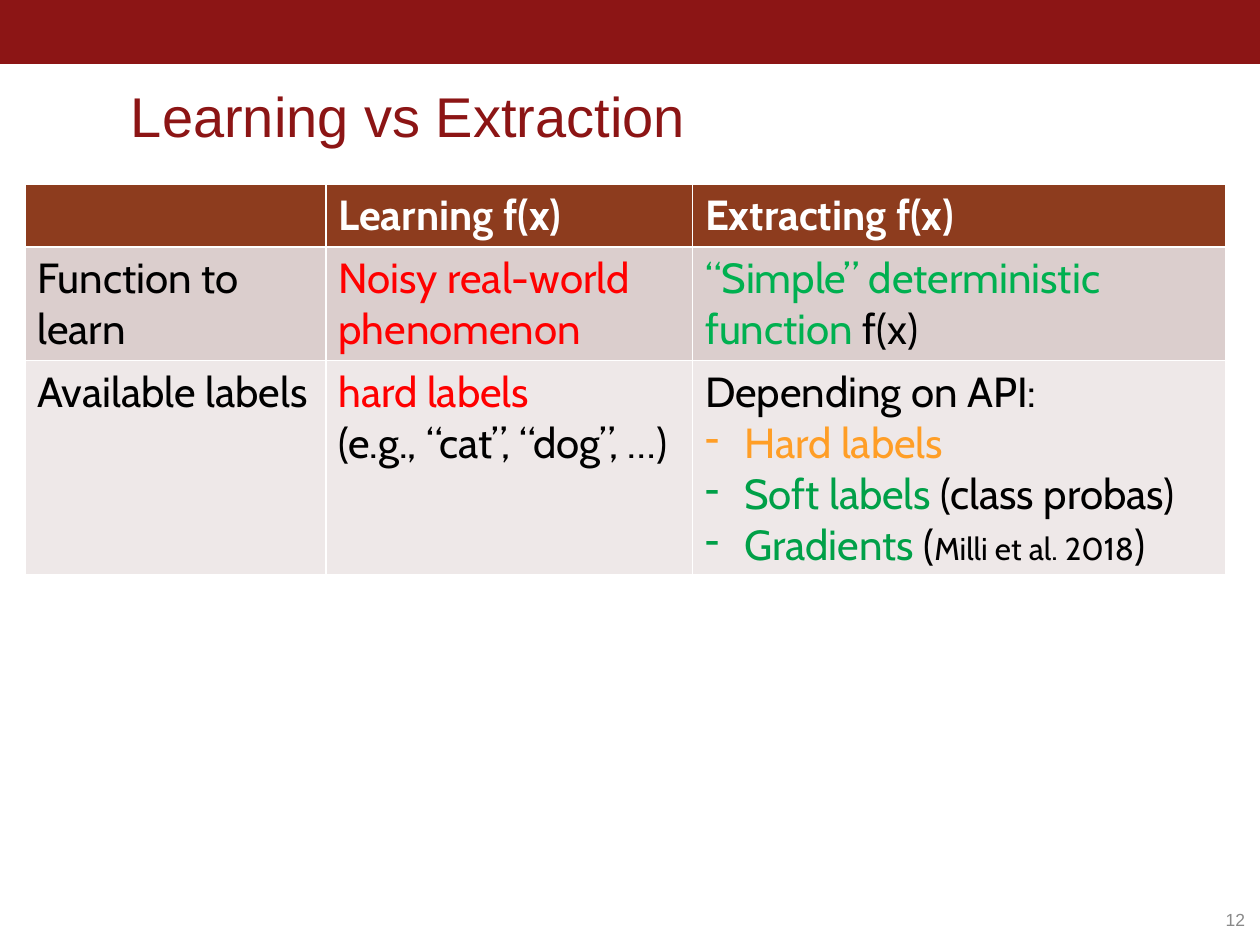
from dataclasses import dataclass

from lxml import etree
from pptx import Presentation
from pptx.dml.color import RGBColor
from pptx.enum.shapes import MSO_SHAPE
from pptx.enum.text import MSO_ANCHOR, PP_ALIGN
from pptx.oxml.ns import qn
from pptx.util import Cm, Pt

RECTANGLE = MSO_SHAPE.RECTANGLE
BOTTOM, MIDDLE = MSO_ANCHOR.BOTTOM, MSO_ANCHOR.MIDDLE
LEFT, RIGHT = PP_ALIGN.LEFT, PP_ALIGN.RIGHT


@dataclass(frozen=True)
class Theme:
    heading_font: str = "Arial"
    table_font: str = "Cabin"
    cardinal: str = "8C1515"
    header_fill: str = "8D3C1E"
    row_fills: tuple = ("DBCECD", "EEE8E8")
    white: str = "FFFFFF"
    black: str = "000000"
    red: str = "FF0000"
    green: str = "00B050"
    deep_green: str = "00A048"
    orange: str = "FF9E26"
    gray: str = "898989"
    title_size: int = 32
    table_size: int = 24
    citation_size: int = 18
    number_size: int = 10


THEME = Theme()

# A cell is a list of paragraphs; a paragraph is a list of (text, color[, size]).
# A paragraph that starts with BULLET is a dash item.
BULLET = "-"
HEADER = ["", "Learning f(x)", "Extracting f(x)"]
COMPARISON = [
    [
        [[("Function to learn", THEME.black)]],
        [[("Noisy real-world phenomenon", THEME.red)]],
        [[("“Simple” deterministic function ", THEME.green), ("f(x)", THEME.black)]],
    ],
    [
        [[("Available labels", THEME.black)]],
        [[("hard labels\n", THEME.red), ("(e.g., “cat”, “dog”, …)", THEME.black)]],
        [
            [("Depending on API:", THEME.black)],
            [BULLET, ("Hard labels", THEME.orange)],
            [BULLET, ("Soft labels", THEME.deep_green), (" (class probas)", THEME.black)],
            [BULLET, ("Gradients", THEME.deep_green), (" (", THEME.black),
             ("Milli et al. 2018", THEME.black, THEME.citation_size), (")", THEME.black)],
        ],
    ],
]


def rgb(color):
    return RGBColor.from_string(color)


def set_font(font, name, size, color, bold=False):
    font.name = name
    font.size = Pt(size)
    font.color.rgb = rgb(color)
    font.bold = bold


def add_banner(slide, width):
    banner = slide.shapes.add_shape(RECTANGLE, 0, 0, width, Cm(1.27))
    banner.shadow.inherit = False
    banner.fill.solid()
    banner.fill.fore_color.rgb = rgb(THEME.cardinal)
    banner.line.color.rgb = rgb(THEME.cardinal)
    banner.line.width = Pt(0.75)


def add_label(slide, text, box, size, color, anchor, align=LEFT):
    frame = slide.shapes.add_textbox(*map(Cm, box)).text_frame
    frame.word_wrap = True
    frame.vertical_anchor = anchor
    paragraph = frame.paragraphs[0]
    paragraph.text = text
    paragraph.alignment = align
    set_font(paragraph.font, THEME.heading_font, size, color)
    return frame


def add_dash(paragraph):
    properties = paragraph._p.get_or_add_pPr()
    indent = Cm(0.79)
    properties.set("marL", str(indent))
    properties.set("indent", str(-indent))
    etree.SubElement(properties, qn("a:buChar"), char=BULLET)


def write_paragraph(paragraph, parts, bold):
    if parts[0] == BULLET:
        add_dash(paragraph)
        parts = parts[1:]
    set_font(paragraph.font, THEME.table_font, THEME.table_size, parts[0][1], bold)
    for text, color, *size in parts:
        run = paragraph.add_run()
        run.text = text.rstrip("\n")
        run.font.color.rgb = rgb(color)
        if size:
            run.font.size = Pt(size[0])
        if text.endswith("\n"):
            paragraph.add_line_break()


def write_cell(cell, paragraphs, fill, bold=False):
    cell.fill.solid()
    cell.fill.fore_color.rgb = rgb(fill)
    frame = cell.text_frame
    for index, parts in enumerate(paragraphs):
        paragraph = frame.add_paragraph() if index else frame.paragraphs[0]
        write_paragraph(paragraph, parts, bold)


def add_comparison(slide):
    column_widths = [6.07, 7.39, 10.74]
    row_height = 1.04
    row_count = len(COMPARISON) + 1
    table = slide.shapes.add_table(
        row_count, len(HEADER), Cm(0.5), Cm(3.71),
        Cm(sum(column_widths)), Cm(row_height * row_count),
    ).table
    for column, width in zip(table.columns, column_widths):
        column.width = Cm(width)
    for index, heading in enumerate(HEADER):
        paragraphs = [[(heading, THEME.white)]] if heading else []
        write_cell(table.cell(0, index), paragraphs, THEME.header_fill, bold=True)
    for row, (contents, fill) in enumerate(zip(COMPARISON, THEME.row_fills), start=1):
        for index, paragraphs in enumerate(contents):
            write_cell(table.cell(row, index), paragraphs, fill)


def main():
    presentation = Presentation()
    presentation.slide_width = Cm(25.4)
    presentation.slide_height = Cm(19.05)
    slide = presentation.slides.add_slide(presentation.slide_layouts[6])

    add_banner(slide, presentation.slide_width)
    title = add_label(slide, "Learning vs Extraction", (2.64, 1.32, 21.41, 1.8),
                      THEME.title_size, THEME.cardinal, BOTTOM)
    title.margin_left = 0
    title.paragraphs[0].line_spacing = 0.85
    add_comparison(slide)
    add_label(slide, "12", (22.99, 18.03, 2.36, 1.02),
              THEME.number_size, THEME.gray, MIDDLE, RIGHT)
    presentation.save("out.pptx")


if __name__ == "__main__":
    main()
